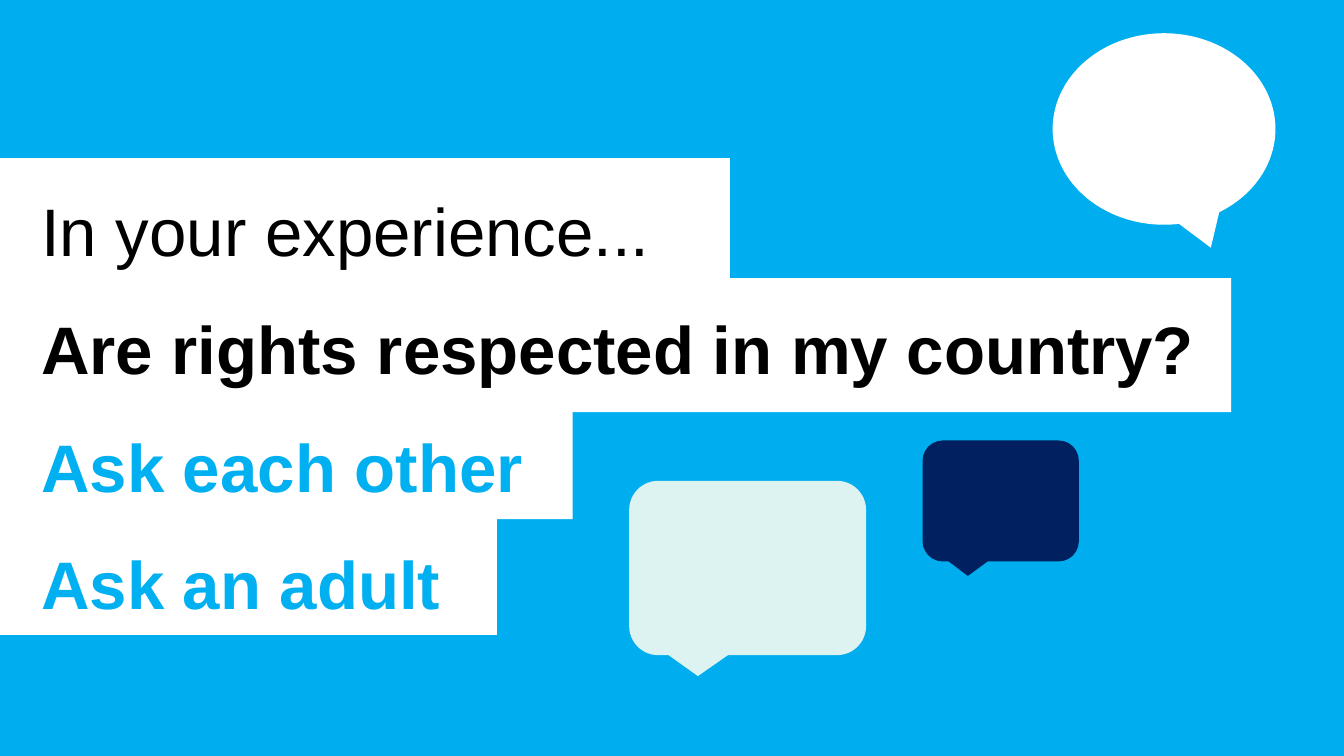
from pptx import Presentation
from pptx import util as u
from pptx.dml.color import RGBColor
from pptx.enum import shapes, text

SKY = RGBColor(0x00, 0xAE, 0xEF)
BRIGHT_BLUE = RGBColor(0x00, 0xB0, 0xF0)
NAVY = RGBColor(0x00, 0x20, 0x60)
MINT = RGBColor(0xDD, 0xF3, 0xF1)
WHITE = RGBColor(0xFF, 0xFF, 0xFF)
BLACK = RGBColor(0x00, 0x00, 0x00)


def write(paragraph, words, *, size=48, color=BLACK, bold=False, font="Arial", before=0):
    paragraph.alignment = text.PP_ALIGN.LEFT
    paragraph.space_before = u.Pt(before)
    run = paragraph.add_run()
    run.text = words
    run.font.name = font
    run.font.size = u.Pt(size)
    run.font.bold = bold
    run.font.color.rgb = color


class QuestionSlide:
    line_gap = 26.5  # points between the prompts

    def __init__(self, presentation, background):
        self.slide = presentation.slides.add_slide(presentation.slide_layouts[6])
        fill = self.slide.background.fill
        fill.solid()
        fill.fore_color.rgb = background

    def shape(self, kind, left, top, width, height, color):
        shape = self.slide.shapes.add_shape(
            kind, u.Inches(left), u.Inches(top), u.Inches(width), u.Inches(height))
        shape.shadow.inherit = False
        shape.fill.solid()
        shape.fill.fore_color.rgb = color
        shape.line.fill.background()
        return shape

    def band(self, top, width):
        return self.shape(shapes.MSO_SHAPE.RECTANGLE, 0, top, width, 1.33, WHITE)

    def bubble(self, kind, left, top, width, height, color, tail_x=-0.21):
        bubble = self.shape(kind, left, top, width, height, color)
        bubble.adjustments[0] = tail_x
        bubble.adjustments[1] = 0.62
        return bubble

    def prompts(self, left, top, width, height, lines):
        box = self.slide.shapes.add_textbox(
            u.Inches(left), u.Inches(top), u.Inches(width), u.Inches(height))
        frame = box.text_frame
        frame.word_wrap = True
        frame.margin_left = frame.margin_right = frame.margin_bottom = u.Inches(0.1)
        frame.margin_top = u.Inches(0.16)
        for index, (words, style) in enumerate(lines):
            paragraph = frame.add_paragraph() if index else frame.paragraphs[0]
            write(paragraph, words, before=self.line_gap if index else 0, **style)


def main():
    presentation = Presentation()
    presentation.slide_width = u.Inches(13.33)
    presentation.slide_height = u.Inches(7.5)
    page = QuestionSlide(presentation, SKY)

    # White bands behind the prompts
    for top, width in [(1.57, 7.24), (2.76, 12.21), (3.82, 5.68), (4.97, 4.93)]:
        page.band(top, width)

    # Prompts
    page.prompts(0.31, 1.72, 12.33, 4.44, [
        ("In your experience...", {}),
        ("Are rights respected in my country?", {"bold": True}),
        ("Ask each other", {"bold": True, "color": BRIGHT_BLUE}),
        ("Ask an adult", {"bold": True, "color": BRIGHT_BLUE}),
    ])

    # Speech bubbles
    rounded = shapes.MSO_SHAPE.ROUNDED_RECTANGULAR_CALLOUT
    page.bubble(rounded, 6.24, 4.77, 2.35, 1.73, MINT)
    page.bubble(shapes.MSO_SHAPE.OVAL_CALLOUT, 10.44, 0.33, 2.21, 1.9, WHITE, tail_x=0.21)
    page.bubble(rounded, 9.15, 4.37, 1.55, 1.2, NAVY)

    presentation.save("out.pptx")


if __name__ == "__main__":
    main()
